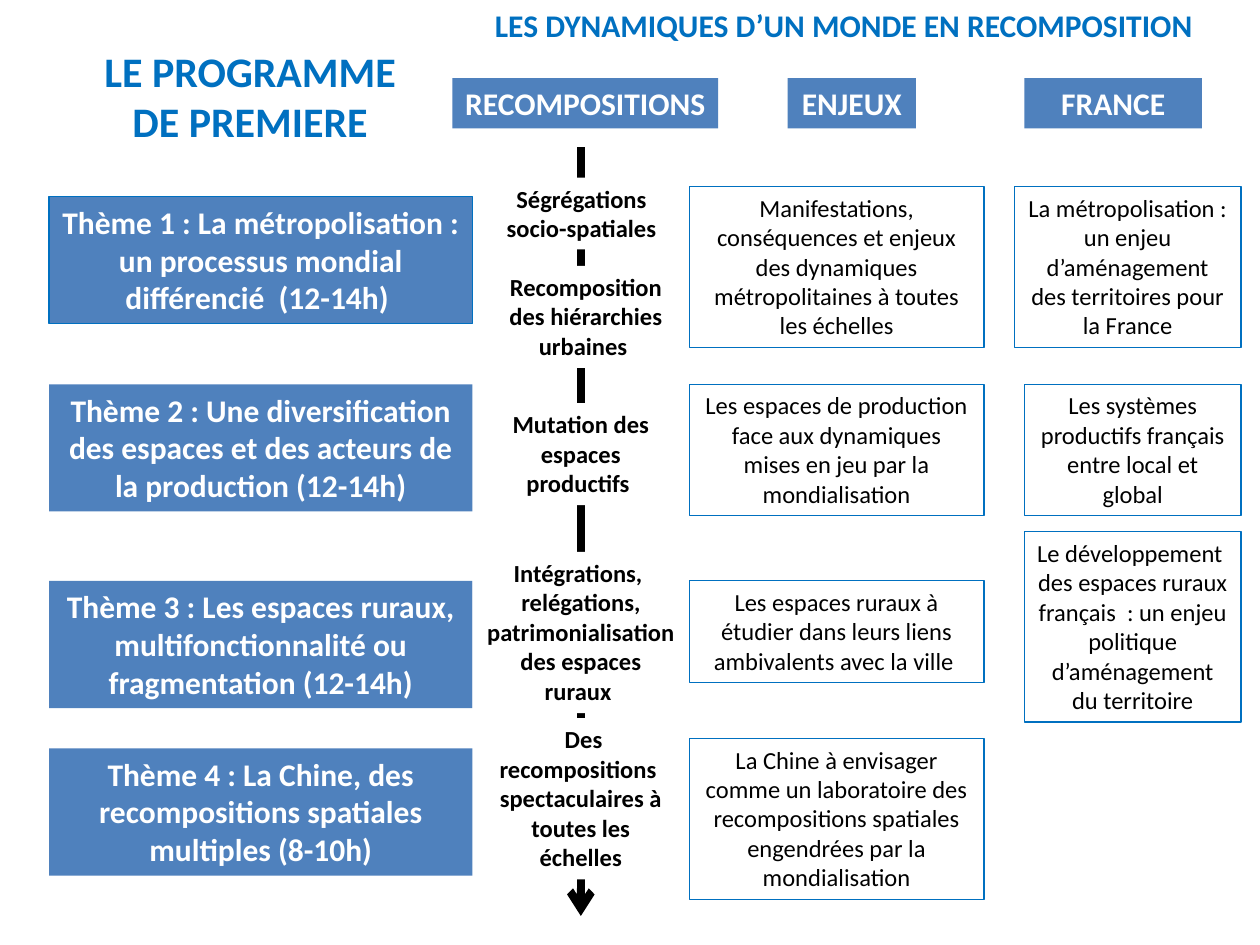
from dataclasses import dataclass

from lxml.etree import SubElement
from pptx import Presentation
from pptx.dml.color import RGBColor
from pptx.enum.shapes import MSO_CONNECTOR as Connector, MSO_SHAPE as Shape
from pptx.enum.text import MSO_ANCHOR as Anchor, MSO_AUTO_SIZE as AutoSize, PP_ALIGN as Align
from pptx.oxml.ns import qn
from pptx.util import Inches, Pt


@dataclass(frozen=True)
class Theme:
    font: str = "Calibri"
    accent: RGBColor = RGBColor(0x00, 0x70, 0xC0)
    panel: RGBColor = RGBColor(0x4F, 0x81, 0xBD)
    white: RGBColor = RGBColor(0xFF, 0xFF, 0xFF)
    black: RGBColor = RGBColor(0x00, 0x00, 0x00)
    title_size: int = 24
    heading_size: int = 18
    body_size: int = 14
    outline: float = 0.75
    arrow: float = 4.5


class SlideBuilder:
    def __init__(self, slide, theme):
        self.slide = slide
        self.theme = theme

    def add_text(self, shape, text, size, color, bold=True, align=Align.CENTER, wrap=True):
        frame = shape.text_frame
        frame.word_wrap = wrap
        frame.auto_size = AutoSize.NONE
        frame.vertical_anchor = Anchor.TOP
        for index, line in enumerate(text.split("\n")):
            paragraph = frame.add_paragraph() if index else frame.paragraphs[0]
            paragraph.alignment = align
            run = paragraph.add_run()
            run.text = line
            run.font.name = self.theme.font
            run.font.size = Pt(size)
            run.font.bold = bold
            run.font.color.rgb = color

    def title(self, text, left, top, width, height):
        shape = self.slide.shapes.title
        shape.left, shape.top = Inches(left), Inches(top)
        shape.width, shape.height = Inches(width), Inches(height)
        self.add_text(shape, text, self.theme.title_size, self.theme.accent)

    def subtitle(self, text, left, top, width, height):
        shape = self.slide.shapes.add_textbox(
            Inches(left), Inches(top), Inches(width), Inches(height))
        self.add_text(shape, text, self.theme.heading_size, self.theme.accent, align=Align.LEFT)

    def box(self, left, top, width, height, fill=None, line=None):
        shape = self.slide.shapes.add_shape(
            Shape.RECTANGLE, Inches(left), Inches(top), Inches(width), Inches(height))
        shape.shadow.inherit = False
        if fill is None:
            shape.fill.background()
        else:
            shape.fill.solid()
            shape.fill.fore_color.rgb = fill
        if line is None:
            shape.line.fill.background()
        else:
            shape.line.color.rgb = line
            shape.line.width = Pt(self.theme.outline)
        return shape

    def heading(self, text, left, top, width, height, line=None, wrap=True):
        shape = self.box(left, top, width, height, self.theme.panel, line)
        self.add_text(shape, text, self.theme.heading_size, self.theme.white, wrap=wrap)

    def step(self, text, left, top, width, height):
        shape = self.box(left, top, width, height, self.theme.white)
        self.add_text(shape, text, self.theme.body_size, self.theme.black)

    def card(self, text, left, top, width, height):
        shape = self.box(left, top, width, height, line=self.theme.accent)
        self.add_text(shape, text, self.theme.body_size, self.theme.black, bold=False)

    def down_arrow(self, x, top, bottom):
        connector = self.slide.shapes.add_connector(
            Connector.STRAIGHT, Inches(x), Inches(top), Inches(x), Inches(bottom))
        connector.line.color.rgb = self.theme.black
        connector.line.width = Pt(self.theme.arrow)
        properties = connector._element.spPr
        SubElement(properties.find(qn("a:ln")), qn("a:tailEnd"), type="arrow")
        SubElement(properties, qn("a:effectLst"))


COLUMNS = [
    ("RECOMPOSITIONS", 3.59, 2.11),
    ("ENJEUX", 6.25, 1.02),
    ("FRANCE", 8.13, 1.41),
]
TOPICS = [
    ("Thème 1 : La métropolisation : un processus mondial différencié  (12-14h) ", 1.56),
    ("Thème 2 : Une diversification des espaces et des acteurs de la production (12-14h)", 3.05),
    ("Thème 3 : Les espaces ruraux, multifonctionnalité ou fragmentation (12-14h)", 4.61),
    ("Thème 4 : La Chine, des recompositions spatiales multiples (8-10h)", 5.94),
]
STEPS = [
    ("Ségrégations socio-spatiales ", 3.91, 1.41, 1.41, 0.57),
    ("Recomposition des hiérarchies urbaines ", 3.91, 2.11, 1.48, 0.81),
    ("Mutation des espaces productifs ", 3.83, 3.2, 1.56, 0.81),
    (" Des recompositions  spectaculaires à toutes les échelles", 3.83, 5.7, 1.56, 1.28),
    ("Intégrations, \nrelégations,\npatrimonialisation des espaces ruraux ", 3.75, 4.38, 1.72, 1.28),
]
ISSUES = [
    ("Manifestations, conséquences et enjeux des dynamiques métropolitaines à toutes les échelles",
     1.48, 1.28),
    ("Les espaces de production face aux dynamiques mises en jeu par la mondialisation",
     3.05, 1.04),
    ("Les espaces ruraux à étudier dans leurs liens ambivalents avec la ville ", 4.61, 0.81),
    ("La Chine à envisager comme un laboratoire des recompositions spatiales engendrées "
     "par la mondialisation", 5.86, 1.28),
]
FRANCE = [
    ("La métropolisation : un enjeu d’aménagement des territoires pour la France",
     8.05, 1.48, 1.8, 1.28),
    ("Les systèmes productifs français entre local et global", 8.13, 3.05, 1.72, 1.04),
    ("Le développement  des espaces ruraux français  : un enjeu politique d’aménagement "
     "du territoire", 8.13, 4.22, 1.72, 1.51),
]


def main():
    presentation = Presentation()
    presentation.slide_width, presentation.slide_height = Inches(10), Inches(7.5)
    theme = Theme()
    slide = presentation.slides.add_slide(presentation.slide_layouts.get_by_name("Title Only"))
    builder = SlideBuilder(slide, theme)

    builder.title("LE PROGRAMME DE PREMIERE", 0.62, 0.31, 2.73, 0.91)
    builder.subtitle("LES DYNAMIQUES D’UN MONDE EN RECOMPOSITION", 3.83, 0, 5.86, 0.4)
    for text, left, width in COLUMNS:
        builder.heading(text, left, 0.62, width, 0.4, wrap=False)
    for index, (text, top) in enumerate(TOPICS):
        builder.heading(text, 0.39, top, 3.36, 1.01, line=None if index else theme.accent)
    builder.down_arrow(4.61, 1.17, 7.27)
    for step in STEPS:
        builder.step(*step)
    for text, top, height in ISSUES:
        builder.card(text, 5.47, top, 2.34, height)
    for card in FRANCE:
        builder.card(*card)

    presentation.save("out.pptx")


if __name__ == "__main__":
    main()
